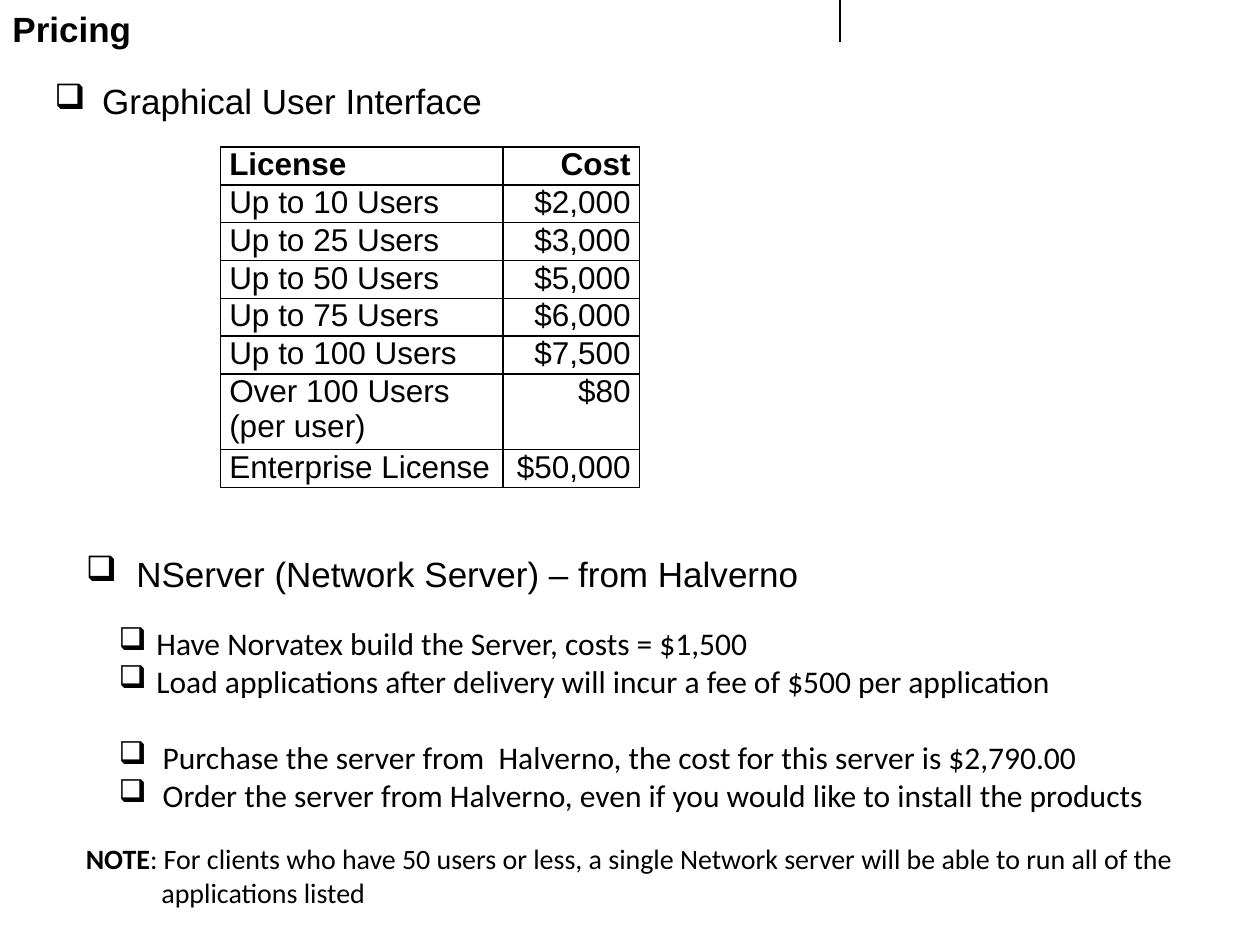
from lxml.etree import SubElement
from pptx import Presentation
from pptx.dml.color import RGBColor
from pptx.enum.shapes import MSO_CONNECTOR as Connector
from pptx.enum.text import PP_ALIGN as Align
from pptx.oxml.ns import qn
from pptx.util import Inches, Pt

BLACK = RGBColor(0x00, 0x00, 0x00)
HEADING, DETAIL = "Arial", "Calibri"
COLUMNS, ROWS = 120, 90

PRICES = [
    ("License", "Cost"),
    ("Up to 10 Users", "$2,000"),
    ("Up to 25 Users", "$3,000"),
    ("Up to 50 Users", "$5,000"),
    ("Up to 75 Users", "$6,000"),
    ("Up to 100 Users", "$7,500"),
    ("Over 100 Users (per user)", "$80"),
    ("Enterprise License", "$50,000"),
]
SERVER_OPTIONS = [
    ("Have Norvatex build the Server, costs = $1,500", 0.56, 17),
    ("Load applications after delivery will incur a fee of $500 per application", 0.56, 0),
    ("Purchase the server from  Halverno, the cost for this server is $2,790.00", 0.61, 22),
    ("Order the server from Halverno, even if you would like to install the products", 0.61, 0),
]


class PricingSlide:
    def __init__(self, deck):
        self.slide = deck.slides.add_slide(deck.slide_layouts[6])
        self.column = deck.slide_width / COLUMNS
        self.row = deck.slide_height / ROWS

    def area(self, left, top, width, height):
        return (round(left * self.column), round(top * self.row),
                round(width * self.column), round(height * self.row))

    def line(self, x, top, bottom, weight):
        left, start, _, end = self.area(x, top, 0, bottom)
        rule = self.slide.shapes.add_connector(Connector.STRAIGHT, left, start, left, end)
        rule.line.color.rgb = BLACK
        rule.line.width = Pt(weight)
        SubElement(rule._element.spPr, qn("a:effectLst"))

    def text_frame(self, *place):
        frame = self.slide.shapes.add_textbox(*self.area(*place)).text_frame
        frame.word_wrap = True
        return frame

    def run(self, paragraph, text, size, font=HEADING, bold=False):
        run = paragraph.add_run()
        run.text = text
        run.font.name = font
        run.font.size = Pt(size)
        run.font.bold = bold
        run.font.color.rgb = BLACK

    def indent(self, paragraph, margin, hanging, bullet=None):
        properties = paragraph._p.get_or_add_pPr()
        properties.set("marL", str(Inches(margin)))
        properties.set("indent", str(-Inches(hanging)))
        if bullet:
            SubElement(properties, qn("a:buChar"), char=bullet)

    def bullet(self, paragraph, text, margin, hanging, size, font=HEADING):
        self.indent(paragraph, margin, hanging, "❑")
        self.run(paragraph, text, size, font)

    def border(self, cell):
        properties = cell._tc.get_or_add_tcPr()
        for position, side in enumerate(("a:lnL", "a:lnR", "a:lnT", "a:lnB")):
            edge = properties.makeelement(qn(side), {"w": str(Pt(1))})
            fill = SubElement(edge, qn("a:solidFill"))
            SubElement(fill, qn("a:srgbClr"), val=str(BLACK))
            properties.insert(position, edge)

    def table(self, left, top, widths, row_height, entries):
        place = self.area(left, top, sum(widths), row_height * (len(entries) + 1))
        table = self.slide.shapes.add_table(len(entries), len(widths), *place).table
        table.first_row = table.horz_banding = False
        for column, width in zip(table.columns, widths):
            column.width = round(width * self.column)
        for number, entry in enumerate(entries):
            lines = 2 if "(per user)" in entry[0] else 1
            table.rows[number].height = round(row_height * lines * self.row)
            for index, text in enumerate(entry):
                cell = table.cell(number, index)
                cell.fill.background()
                cell.margin_left = cell.margin_right = Inches(0.07)
                cell.margin_top = cell.margin_bottom = 0
                paragraph = cell.text_frame.paragraphs[0]
                paragraph.alignment = Align.RIGHT if index else Align.LEFT
                self.run(paragraph, text, 18, bold=number == 0)
                self.border(cell)


def main():
    deck = Presentation()
    deck.slide_width, deck.slide_height = Inches(10), Inches(7.5)
    pricing = PricingSlide(deck)

    pricing.line(80, 0, 4, 0.75)
    interface = pricing.text_frame(4, 7, 108, 6).paragraphs[0]
    pricing.bullet(interface, "Graphical User Interface", 0.38, 0.38, 20)
    title = pricing.text_frame(0, 0.1, 76, 5.25).paragraphs[0]
    pricing.run(title, "Pricing", 20, bold=True)
    pricing.table(21, 14, (26.9, 13), 3.6, PRICES)

    server = pricing.text_frame(7, 52, 108, 29)
    pricing.bullet(server.paragraphs[0], "NServer (Network Server) – from Halverno", 0.4, 0.4, 20)
    for text, margin, gap in SERVER_OPTIONS:
        option = server.add_paragraph()
        option.space_before = Pt(gap)
        pricing.bullet(option, text, margin, margin - 0.26, 18, DETAIL)
    note = server.add_paragraph()
    note.space_before = Pt(16)
    pricing.indent(note, 0.6, 0.6)
    pricing.run(note, "NOTE", 16, DETAIL, bold=True)
    pricing.run(note, ": For clients who have 50 users or less, a single Network server "
                "will be able to run all of the applications listed", 16, DETAIL)
    deck.save("out.pptx")


if __name__ == "__main__":
    main()
